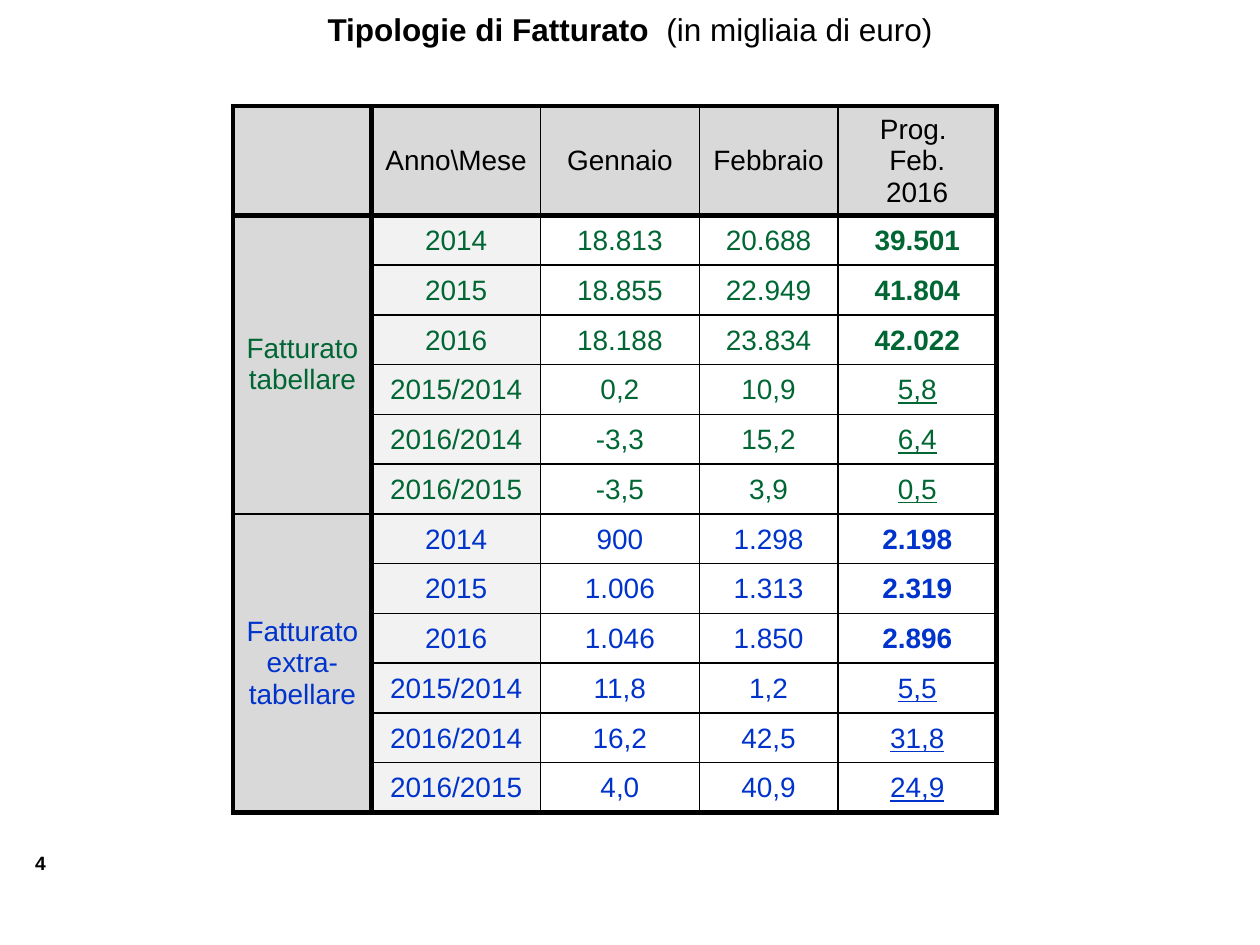
import pptx
import pptx.util
import pptx.dml.color
import pptx.enum.text
import pptx.oxml
import pptx.oxml.ns
from pptx.util import Inches

FONT = "Arial"
BLACK, GREEN, BLUE = "000000", "006633", "0033CC"
GREY, PALE = "D9D9D9", "F2F2F2"
THIN, THICK = 1, 3
PLAIN = "{2D5ABB26-0587-4C30-8999-92F81FD0307C}"  # table style without grid
CENTER = pptx.enum.text.PP_ALIGN.CENTER
MIDDLE = pptx.enum.text.MSO_ANCHOR.MIDDLE

HEAD = ["", "Anno\\Mese", "Gennaio", "Febbraio", "Prog. \nFeb.\n2016"]
PERIODS = ["2014", "2015", "2016", "2015/2014", "2016/2014", "2016/2015"]
SPAN = len(PERIODS)
GROUPS = [
    ("Fatturato tabellare", GREEN, [
        ("18.813", "20.688", "39.501"),
        ("18.855", "22.949", "41.804"),
        ("18.188", "23.834", "42.022"),
        ("0,2", "10,9", "5,8"),
        ("-3,3", "15,2", "6,4"),
        ("-3,5", "3,9", "0,5")]),
    ("Fatturato extra-tabellare", BLUE, [
        ("900", "1.298", "2.198"),
        ("1.006", "1.313", "2.319"),
        ("1.046", "1.850", "2.896"),
        ("11,8", "1,2", "5,5"),
        ("16,2", "42,5", "31,8"),
        ("4,0", "40,9", "24,9")]),
]
WIDTHS = [1.1, 1.34, 1.26, 1.1, 1.26]
HEAD_H = 0.87
ROWS = 1 + SPAN * len(GROUPS)


def rgb(code):
    return pptx.dml.color.RGBColor.from_string(code)


def style(font, size, color=BLACK, bold=False, under=False):
    font.name, font.size = FONT, pptx.util.Pt(size)
    font.color.rgb = rgb(color)
    font.bold, font.underline = bold, under


def write(cell, text, color=BLACK, bold=False, under=False):
    cell.text = text
    for para in cell.text_frame.paragraphs:
        para.alignment = CENTER
        style(para.font, 16, color, bold, under)


def rule(cell, sides):
    """Draw cell borders; sides maps L, R, T, B to a width in points."""
    props = cell._tc.get_or_add_tcPr()
    for spot, (side, width) in enumerate(sides.items()):
        props.insert(spot, pptx.oxml.parse_xml(
            f'<a:ln{side} {pptx.oxml.ns.nsdecls("a")} w="{pptx.util.Pt(width)}">'
            f'<a:solidFill><a:srgbClr val="{BLACK}"/></a:solidFill></a:ln{side}>'))


def borders(row, col):
    """Thick frame, header and first column; thin lines elsewhere."""
    def across(edge):
        return THICK if edge in (0, 1, ROWS) else THIN

    def down(edge):
        return THICK if edge in (0, 1, len(WIDTHS)) else THIN

    sides = {"L": down(col), "R": down(col + 1)}
    if col or not row:
        return sides | {"T": across(row), "B": across(row + 1)}
    # Merged label cells have no lines inside the group
    step = (row - 1) % SPAN
    if step == 0:
        sides |= {"T": across(row), "B": across(row + SPAN)}
    elif step == SPAN - 1:
        sides["B"] = across(row + 1)
    return sides


def add_title(slide, left, top, width, height):
    title = slide.shapes.title
    title.left, title.top, title.width, title.height = left, top, width, height
    frame = title.text_frame
    frame.word_wrap = True
    frame.auto_size = pptx.enum.text.MSO_AUTO_SIZE.NONE
    frame.vertical_anchor = MIDDLE
    para = frame.paragraphs[0]
    para.alignment = CENTER
    for text, bold in [("Tipologie di Fatturato  ", True),
                       ("(in migliaia di euro)", False)]:
        run = para.add_run()
        run.text = text
        style(run.font, 18, bold=bold)


def add_sales(slide, left, top, width, height):
    shape = slide.shapes.add_table(ROWS, len(WIDTHS), left, top, width, height)
    table = shape.table
    table.first_row = table.horz_banding = False
    table._tbl.tblPr.find(pptx.oxml.ns.qn("a:tableStyleId")).text = PLAIN

    # Grid
    for col, size in zip(table.columns, WIDTHS):
        col.width = Inches(size)
    for num, line in enumerate(table.rows):
        line.height = Inches(HEAD_H) if num == 0 else int(
            (height - Inches(HEAD_H)) / (ROWS - 1))

    # Wording
    for col, text in enumerate(HEAD):
        write(table.cell(0, col), text)
    for num, (label, color, lines) in enumerate(GROUPS):
        start = 1 + num * SPAN
        write(table.cell(start, 0), label, color)
        for step, (period, line) in enumerate(zip(PERIODS, lines)):
            ratio = "/" in period
            for col, text in enumerate((period, *line), 1):
                total = col == len(WIDTHS) - 1
                write(table.cell(start + step, col), text, color,
                      total and not ratio, total and ratio)
        table.cell(start, 0).merge(table.cell(start + SPAN - 1, 0))

    # Fills, margins and borders
    for row in range(ROWS):
        for col in range(len(WIDTHS)):
            cell = table.cell(row, col)
            cell.vertical_anchor = MIDDLE
            gap = Inches(0.01 if col else 0)
            cell.margin_left = cell.margin_right = cell.margin_top = gap
            cell.margin_bottom = 0
            if row == 0 or col < 2:
                cell.fill.solid()
                cell.fill.fore_color.rgb = rgb(PALE if row and col else GREY)
            else:
                cell.fill.background()
            rule(cell, borders(row, col))


def add_number(slide, left, top, width, height):
    frame = slide.shapes.add_textbox(left, top, width, height).text_frame
    frame.word_wrap = False
    frame.text = "4"
    style(frame.paragraphs[0].font, 11, bold=True)


def main():
    deck = pptx.Presentation()
    deck.slide_width, deck.slide_height = Inches(10), Inches(7.5)
    slide = deck.slides.add_slide(deck.slide_layouts[5])
    add_number(slide, Inches(0.18), Inches(6.71), Inches(0.42), Inches(0.29))
    add_sales(slide, Inches(1.85), Inches(0.84), Inches(6.06), Inches(5.61))
    add_title(slide, Inches(0), Inches(0.03), Inches(10), Inches(0.4))
    deck.save("out.pptx")


if __name__ == "__main__":
    main()
